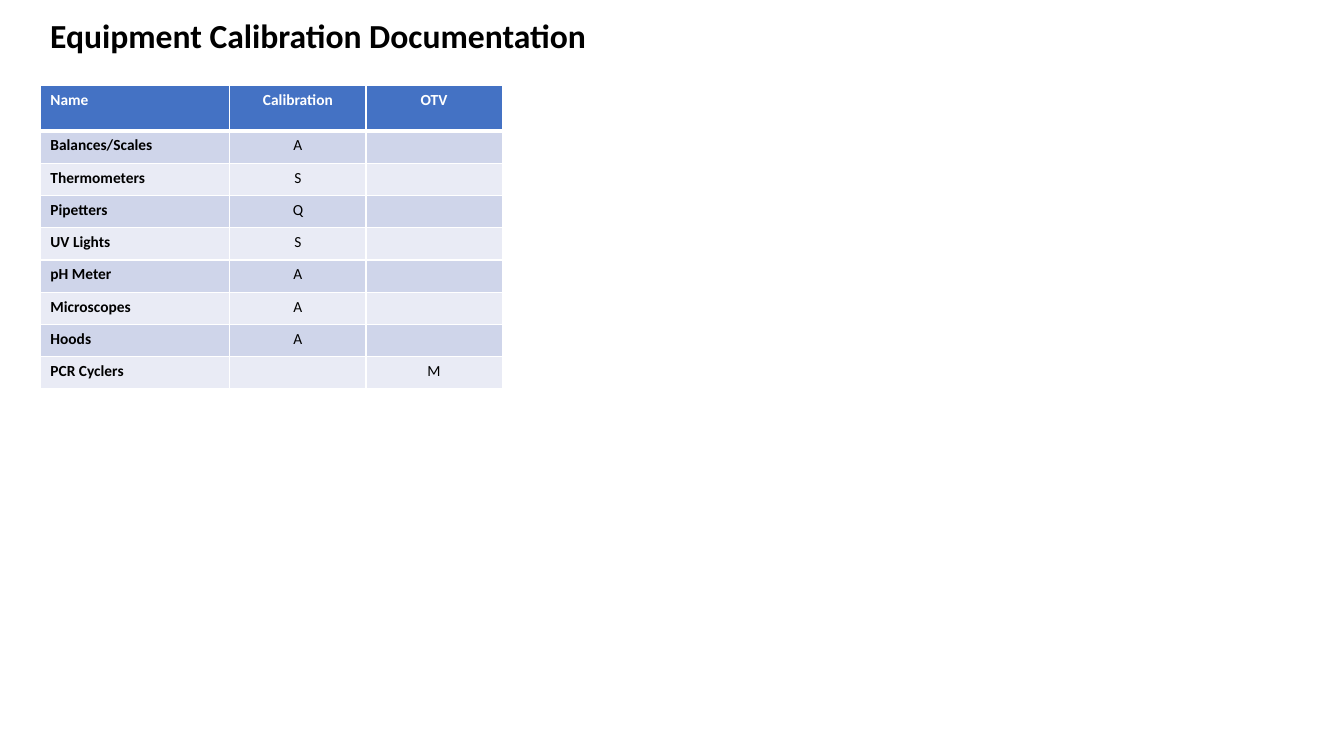
"""Build the equipment calibration slide."""
from dataclasses import dataclass
from typing import Any

from lxml.etree import SubElement as Sub
from pptx import Presentation
from pptx.dml.color import RGBColor as Rgb
from pptx.enum.text import MSO_AUTO_SIZE as Fit, PP_ALIGN as Align
from pptx.oxml.ns import qn
from pptx.util import Inches, Pt


@dataclass(frozen=True)
class Theme:
    """Hold the colours, font and type sizes."""
    font: str = "Calibri"
    title: int = 24
    body: int = 11
    ink: str = "000000"
    white: str = "FFFFFF"
    head: str = "4472C4"
    bands: tuple[str, str] = ("CFD5EA", "E9EBF5")
    thin: int = 1
    thick: int = 3


@dataclass(frozen=True)
class Device:
    """Describe one row of equipment."""
    name: str
    check: str = ""
    otv: str = ""


LOOK = Theme()
HEAD = Device("Name", "Calibration", "OTV")
ITEMS = (
    Device("Balances/Scales", "A"),
    Device("Thermometers", "S"),
    Device("Pipetters", "Q"),
    Device("UV Lights", "S"),
    Device("pH Meter", "A"),
    Device("Microscopes", "A"),
    Device("Hoods", "A"),
    Device("PCR Cyclers", otv="M"),
)
WIDTHS = (1.88, 1.35, 1.35)
HEAD_H, ROW_H = 0.45, 0.32


def put(part: Any, text: str, size: int, color: str, bold: bool) -> None:
    """Write one formatted run into a paragraph."""
    if not text:
        Sub(part._p, qn("a:endParaRPr"), sz=str(size * 100))
        return
    run = part.add_run()
    run.text = text
    form = {"name": LOOK.font, "size": Pt(size), "bold": bold}
    for key, value in form.items():
        setattr(run.font, key, value)
    run.font.color.rgb = Rgb.from_string(color)


def edge(cell: Any, row: int) -> None:
    """Draw the white borders of a cell."""
    props = cell._tc.get_or_add_tcPr()
    heavy = {0: "B", 1: "T"}.get(row)
    for side in "LRTB":
        width = LOOK.thick if side == heavy else LOOK.thin
        line = Sub(props, qn(f"a:ln{side}"), w=str(Pt(width)))
        Sub(Sub(line, qn("a:solidFill")), qn("a:srgbClr"), val=LOOK.white)


def title(slide: Any, text: str) -> None:
    """Place the slide title."""
    box = slide.shapes.add_textbox(*map(Inches, (0.4, 0.1, 5.57, 0.5)))
    form = {"word_wrap": False, "auto_size": Fit.SHAPE_TO_FIT_TEXT}
    for key, value in form.items():
        setattr(box.text_frame, key, value)
    put(box.text_frame.paragraphs[0], text, LOOK.title, LOOK.ink, True)


def grid(slide: Any, rows: tuple[Device, ...]) -> None:
    """Place the equipment table."""
    tall = HEAD_H + ROW_H * (len(rows) - 1)
    area = map(Inches, (0.4, 0.85, sum(WIDTHS), tall))
    table = slide.shapes.add_table(len(rows), len(WIDTHS), *area).table
    for col, width in zip(table.columns, WIDTHS):
        col.width = Inches(width)
    for row, item in enumerate(rows):
        top = row == 0
        table.rows[row].height = Inches(HEAD_H if top else ROW_H)
        fill = LOOK.head if top else LOOK.bands[(row - 1) % 2]
        ink = LOOK.white if top else LOOK.ink
        for col, text in enumerate((item.name, item.check, item.otv)):
            cell = table.cell(row, col)
            edge(cell, row)
            cell.fill.solid()
            cell.fill.fore_color.rgb = Rgb.from_string(fill)
            part = cell.text_frame.paragraphs[0]
            part.alignment = Align.CENTER if col else Align.LEFT
            put(part, text, LOOK.body, ink, top or col == 0)


def main() -> None:
    """Create and save the slide."""
    deck = Presentation()
    size = {"slide_width": Inches(13.33), "slide_height": Inches(7.5)}
    for key, value in size.items():
        setattr(deck, key, value)
    slide = deck.slides.add_slide(deck.slide_layouts[6])
    grid(slide, (HEAD, *ITEMS))
    title(slide, "Equipment Calibration Documentation")
    deck.save("out.pptx")


if __name__ == "__main__":
    main()
